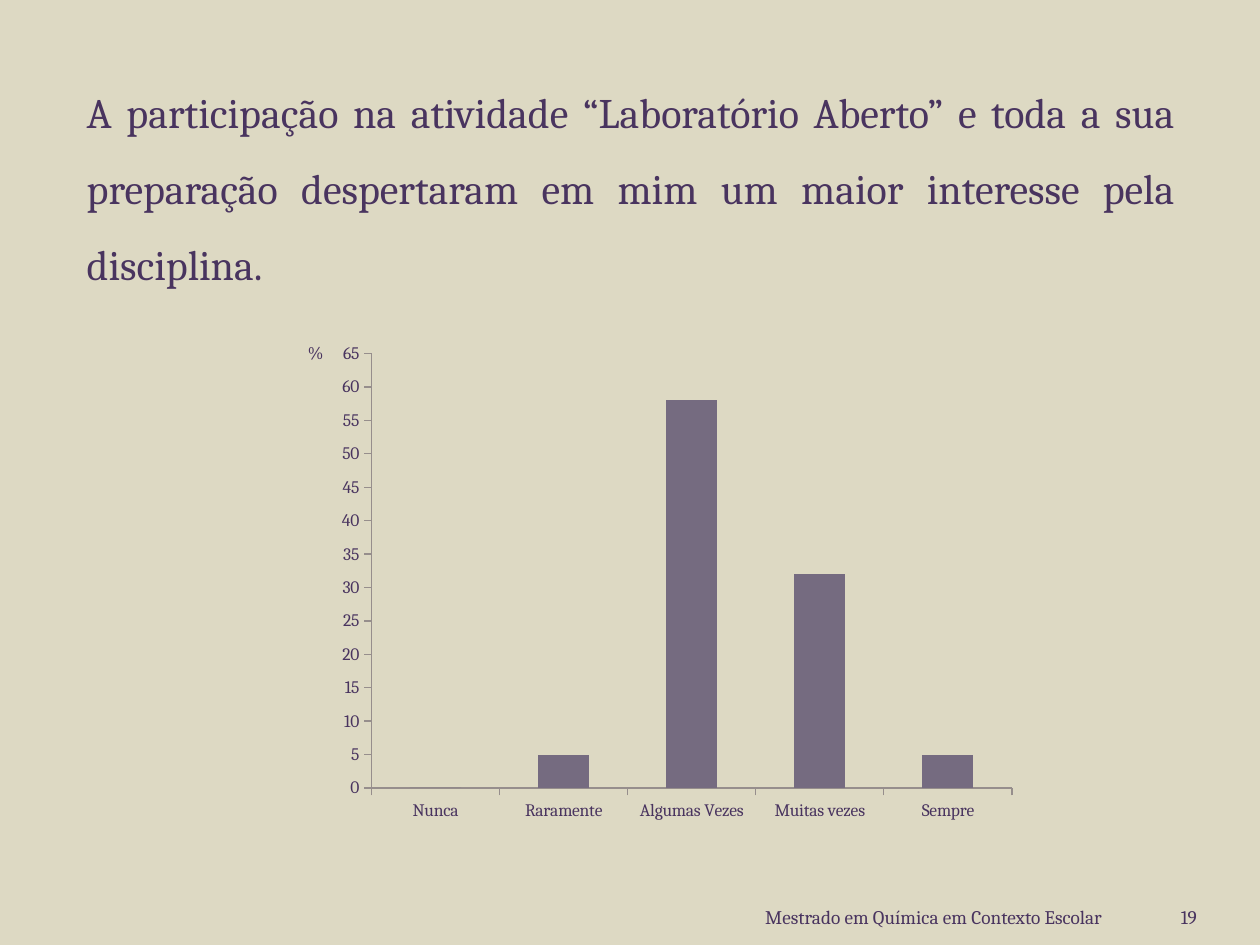
from lxml import etree
from pptx import Presentation, util as u
from pptx.chart.data import CategoryChartData
from pptx.dml.color import RGBColor
from pptx.enum import chart as ch, text
from pptx.oxml import parse_xml
from pptx.oxml.ns import nsdecls, qn

SAND = RGBColor(0xDD, 0xD9, 0xC3)
PURPLE = RGBColor(0x49, 0x34, 0x5F)
BAR = RGBColor(0x75, 0x6B, 0x80)
AXIS = RGBColor(0x96, 0x8E, 0x8C)
FONT = "Cambria"
ANSWERS = {"Nunca": 0, "Raramente": 5, "Algumas Vezes": 58, "Muitas vezes": 32, "Sempre": 5}


def style_font(font, size):
    font.name, font.size, font.bold = FONT, u.Pt(size), False
    font.color.rgb = PURPLE


def add_text(s, box, content, size=11, align=text.PP_ALIGN.RIGHT,
             anchor=text.MSO_ANCHOR.MIDDLE, right=0.0, spacing=None, before=None):
    tf = s.shapes.add_textbox(*map(u.Inches, box)).text_frame
    tf.word_wrap = True
    tf.vertical_anchor = anchor
    tf.margin_right = u.Inches(right)
    p = tf.paragraphs[0]
    p.alignment, p.line_spacing = align, spacing
    if before is not None:
        p.space_before = u.Pt(before)
    r = p.add_run()
    r.text = content
    style_font(r.font, size)


def set_layout(parent, after, target=None, **shares):
    """Place a chart part by shares of the chart's size."""
    for old in parent.findall(qn("c:layout")):
        parent.remove(old)
    layout = parse_xml(f"<c:layout {nsdecls('c')}><c:manualLayout/></c:layout>")
    settings = {"xMode": "edge", "yMode": "edge", **shares}
    if target:
        settings = {"layoutTarget": target, **settings}
    for name, value in settings.items():
        etree.SubElement(layout[0], qn(f"c:{name}")).set("val", str(value))
    if after is None:
        parent.insert(0, layout)
    else:
        after.addnext(layout)


def add_answer_chart(s, box):
    data = CategoryChartData()
    data.categories = list(ANSWERS)
    data.add_series("Series 1", list(ANSWERS.values()))
    chart = s.shapes.add_chart(ch.XL_CHART_TYPE.COLUMN_CLUSTERED,
                               *map(u.Inches, box), data).chart
    chart.has_legend = chart.has_title = False
    style_font(chart.font, 10)

    plot = chart.plots[0]
    plot.gap_width, plot.vary_by_categories = 150, False
    fill = plot.series[0].format.fill
    fill.solid()
    fill.fore_color.rgb = BAR

    values = chart.value_axis
    for axis in (chart.category_axis, values):
        axis.has_major_gridlines = False
        axis.major_tick_mark = ch.XL_TICK_MARK.OUTSIDE
        axis.format.line.color.rgb = AXIS
        axis.format.line.width = u.Pt(0.75)
    values.minimum_scale, values.maximum_scale, values.major_unit = 0, 65, 5

    tf = values.axis_title.text_frame
    tf.text = "%"
    style_font(tf.paragraphs[0].runs[0].font, 10)
    body = values.axis_title._element.find(".//" + qn("a:bodyPr"))
    body.set("rot", "0")
    body.set("vert", "horz")

    title = values.axis_title._element
    set_layout(title, title.find(qn("c:tx")), x=0.03, y=0.01)
    area = chart._chartSpace.find(".//" + qn("c:plotArea"))
    set_layout(area, None, target="inner", x=0.12, y=0.04, w=0.86, h=0.875)


def add_footer(s, left, top, width, height):
    number_width, gap = 0.67, 0.08
    label_width = width - number_width - gap
    add_text(s, (left, top, label_width, height), "Mestrado em Química em Contexto Escolar")
    add_text(s, (left + label_width + gap, top, number_width, height), "19")


def main():
    prs = Presentation()
    prs.slide_width, prs.slide_height = u.Inches(10), u.Inches(7.5)
    s = prs.slides.add_slide(prs.slide_layouts[6])
    s.background.fill.solid()
    s.background.fill.fore_color.rgb = SAND

    add_footer(s, 4.75, 7.15, 4.75, 0.25)
    add_text(s, (0.59, 0.44, 8.83, 6.54),
             "A participação na atividade “Laboratório Aberto” e toda a sua preparação "
             "despertaram em mim um maior interesse pela disciplina.",
             size=24, align=text.PP_ALIGN.JUSTIFY, anchor=text.MSO_ANCHOR.TOP,
             right=0.1, spacing=1.5, before=15)
    add_answer_chart(s, (2.24, 2.65, 5.91, 3.94))
    prs.save("out.pptx")


if __name__ == "__main__":
    main()
